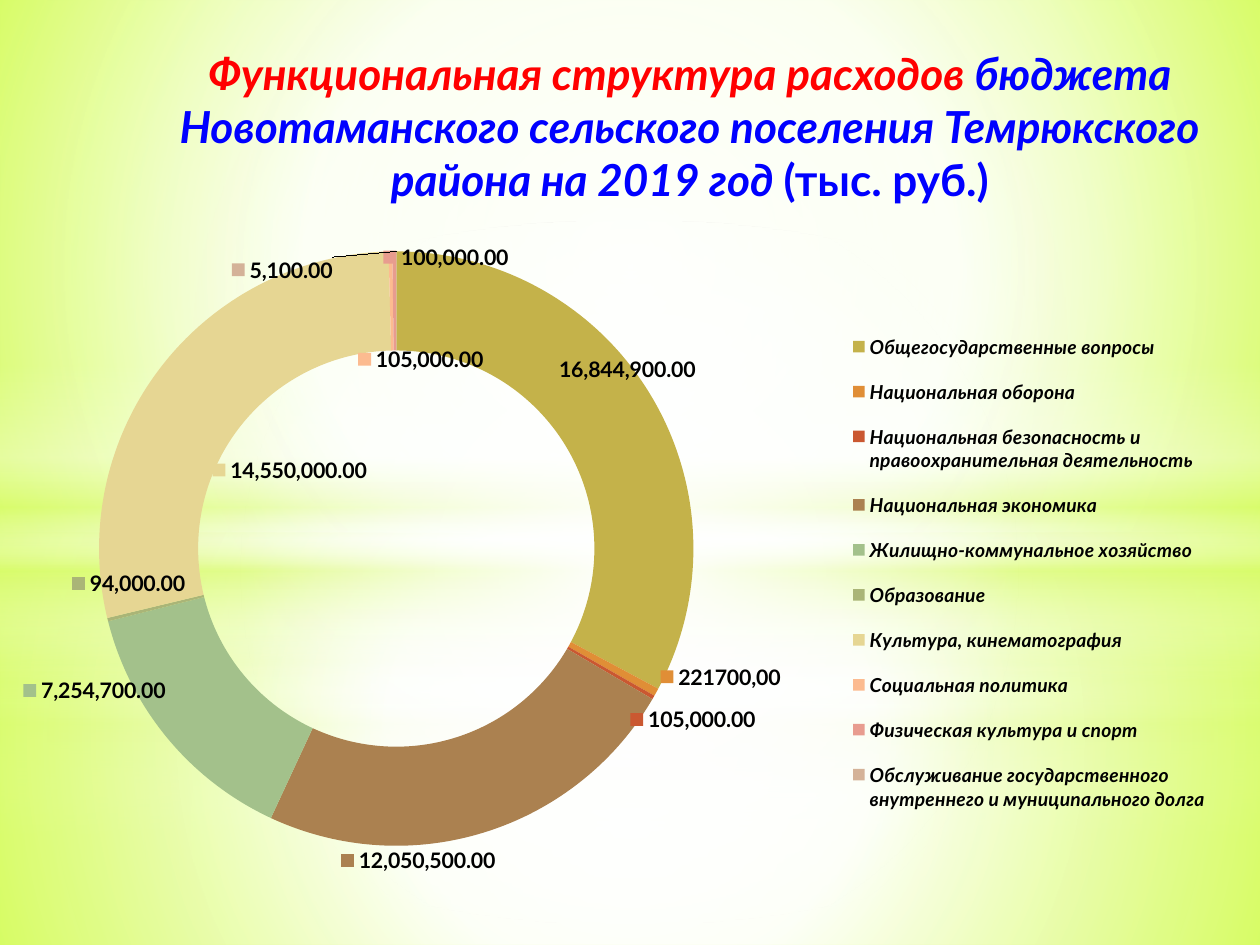
import math
from dataclasses import dataclass

import pptx
import pptx.chart.data
import pptx.dml.color
import pptx.enum.chart
import pptx.enum.shapes
import pptx.enum.text
import pptx.oxml
import pptx.util
from lxml import etree

A = "http://schemas.openxmlformats.org/drawingml/2006/main"
C = "http://schemas.openxmlformats.org/drawingml/2006/chart"
NS = f'xmlns:a="{A}" xmlns:c="{C}"'


@dataclass
class Theme:
    font: str = "Lato"
    red: str = "FF0000"
    blue: str = "0000FF"
    black: str = "000000"
    white: str = "FFFFFF"
    lime: str = "D8FC68"
    backdrop: tuple = ((0, "D6FF5B"), (60, "F8FFE3"), (100, "C9FF25"))
    title_size: float = 25.2
    label_size: float = 12.2
    legend_size: float = 11


THEME = Theme()
WIDTH, HEIGHT = 10, 7.5
CHART_TOP, CHART_HEIGHT = 0.02, 7.48
PLOT = (0, 0.159, 0.629, 0.841)
LEGEND = (0.667, 0.33, 0.3, 0.55)

# Category, value, colour, label centre in inches
EXPENSES = [
    ("Общегосударственные вопросы", 16844900, "C4B24A", (4.98, 2.93)),
    ("Национальная оборона", 221700, "E08E36", (5.72, 5.37)),
    ("Национальная безопасность и правоохранительная деятельность", 105000, "CA5831", (5.5, 5.71)),
    ("Национальная экономика", 12050500, "AB8150", (3.32, 6.83)),
    ("Жилищно-коммунальное хозяйство", 7254700, "A3C18B", (0.75, 5.48)),
    ("Образование", 94000, "AAB577", (1.02, 4.63)),
    ("Культура, кинематография", 14550000, "E6D693", (2.3, 3.73)),
    ("Социальная политика", 105000, "FCBB90", (3.34, 2.85)),
    ("Физическая культура и спорт", 100000, "E89C8F", (3.54, 2.04)),
    ("Обслуживание государственного внутреннего и муниципального долга", 5100, "D4B298", (2.24, 2.14)),
]
CUSTOM_LABELS = {1: "221700,00"}


def style(font, size, color, bold=True, italic=False):
    font.name, font.size = THEME.font, pptx.util.Pt(size)
    font.bold, font.italic = bold, italic
    font.color.rgb = pptx.dml.color.RGBColor.from_string(color)


def gradient(stops, focus=None):
    """Gradient of (position, colour[, opacity]) stops; radial around focus, else vertical."""
    marks = "".join(
        f'<a:gs pos="{pos * 1000}"><a:srgbClr val="{color}">'
        f'<a:alpha val="{(opacity[0] if opacity else 100) * 1000}"/></a:srgbClr></a:gs>'
        for pos, color, *opacity in stops)
    direction = '<a:lin ang="5400000" scaled="0"/>'
    if focus:
        sides = " ".join(f'{side}="{share * 1000}"' for side, share in zip("ltrb", focus))
        direction = f'<a:path path="circle"><a:fillToRect {sides}/></a:path>'
    return pptx.oxml.parse_xml(
        f'<a:gradFill {NS} rotWithShape="1"><a:gsLst>{marks}</a:gsLst>{direction}</a:gradFill>')


def manual_layout(box, inner=False):
    target = '<c:layoutTarget val="inner"/>' if inner else ""
    modes = '<c:xMode val="edge"/><c:yMode val="edge"/>' if len(box) == 4 else ""
    sizes = "".join(f'<c:{tag} val="{share:.4f}"/>' for tag, share in zip("xywh", box))
    return f'<c:layout {NS}><c:manualLayout>{target}{modes}{sizes}</c:manualLayout></c:layout>'


def set_layout(parent, box, before, inner=False):
    for old in parent.findall(f"{{{C}}}layout"):
        parent.remove(old)
    parent.find(f"{{{C}}}{before}").addprevious(pptx.oxml.parse_xml(manual_layout(box, inner)))


class Deck:
    def __init__(self):
        self.file = pptx.Presentation()
        self.file.slide_width = pptx.util.Inches(WIDTH)
        self.file.slide_height = pptx.util.Inches(HEIGHT)
        self.slide = self.file.slides.add_slide(self.file.slide_layouts[5])

    def box(self, left, top, width, height):
        """Shares of the slide's size as lengths."""
        return [pptx.util.Inches(v) for v in
                (left * WIDTH, top * HEIGHT, width * WIDTH, height * HEIGHT)]

    def background(self, stops, focus):
        fill = self.slide.background.fill
        fill.solid()
        solid = self.slide.element.find(f".//{{{A}}}solidFill")
        solid.getparent().replace(solid, gradient(stops, focus))

    def glow(self, kind, top, height, stops, focus=None):
        band = self.slide.shapes.add_shape(kind, *self.box(0, top / HEIGHT, 1, height / HEIGHT))
        band.shadow.inherit = False
        band.line.fill.background()
        band.fill.solid()
        solid = band._element.spPr.find(f"{{{A}}}solidFill")
        solid.getparent().replace(solid, gradient(stops, focus))

    def title(self, runs, box):
        heading = self.slide.shapes.title
        heading.left, heading.top, heading.width, heading.height = self.box(*box)
        frame = heading.text_frame
        frame.word_wrap = True
        frame.auto_size = pptx.enum.text.MSO_AUTO_SIZE.NONE
        frame.vertical_anchor = pptx.enum.text.MSO_ANCHOR.BOTTOM
        frame.margin_bottom = pptx.util.Inches(0.47)
        line = frame.paragraphs[0]
        line.alignment = pptx.enum.text.PP_ALIGN.CENTER
        for words, color, italic in runs:
            run = line.add_run()
            run.text = words
            style(run.font, THEME.title_size, color, italic=italic)
        self.slide.shapes._spTree.append(heading._element)  # bring in front of the glow

    def doughnut(self, rows, box):
        data = pptx.chart.data.CategoryChartData(number_format="#,##0.00")
        data.categories = [row[0] for row in rows]
        empty = [None] * len(rows)
        for number, values in enumerate((empty, [row[1] for row in rows], empty), 1):
            data.add_series(f"Series {number}", values)
        chart = self.slide.shapes.add_chart(
            pptx.enum.chart.XL_CHART_TYPE.DOUGHNUT, *self.box(*box), data).chart
        style(chart.font, 10, THEME.black, bold=False)
        chart.has_title = False
        chart.has_legend = True
        legend = chart.legend
        legend.position = pptx.enum.chart.XL_LEGEND_POSITION.RIGHT
        legend.include_in_layout = False
        style(legend.font, THEME.legend_size, THEME.black, italic=True)
        set_layout(legend._element, LEGEND, "overlay")
        plot = chart.plots[0]
        plot.vary_by_categories = True
        set_layout(plot._element.getparent(), PLOT, "doughnutChart", inner=True)
        for series in plot.series:
            for index, row in enumerate(rows):
                wedge = series.points[index].format
                wedge.fill.solid()
                wedge.fill.fore_color.rgb = pptx.dml.color.RGBColor.from_string(row[2])
                wedge.line.fill.background()
        self.wedge_labels(plot.series[1], rows)

    def wedge_labels(self, series, rows):
        labels = series.data_labels
        labels.show_value = True
        labels.number_format, labels.number_format_is_linked = "#,##0.00", False
        style(labels.font, THEME.label_size, THEME.black)
        # Label offsets run from the middle of each wedge of the middle ring
        radius = PLOT[2] * WIDTH / 2
        center_y = CHART_TOP + (PLOT[1] + PLOT[3] / 2) * CHART_HEIGHT
        total, passed = sum(row[1] for row in rows), 0
        for index, (_, value, _, (x, y)) in enumerate(rows):
            angle = 2 * math.pi * (passed + value / 2) / total
            passed += value
            ring = radius * 0.625
            offset = ((x - radius - ring * math.sin(angle)) / WIDTH,
                      (y - center_y + ring * math.cos(angle)) / CHART_HEIGHT)
            label = series.points[index].data_label
            if index in CUSTOM_LABELS:
                run = label.text_frame.paragraphs[0].add_run()
                run.text = CUSTOM_LABELS[index]
                style(run.font, THEME.label_size, THEME.black)
            else:
                style(label.font, THEME.label_size, THEME.black)
            node = labels._element.findall(f"{{{C}}}dLbl")[index]
            node.find(f"{{{C}}}idx").addnext(pptx.oxml.parse_xml(manual_layout(offset)))
            node.find(f"{{{C}}}showLegendKey").set("val", "1" if index else "0")
            for tag in ("showCatName", "showSerName", "showPercent", "dLblPos"):
                for flag in node.findall(f"{{{C}}}{tag}"):
                    if tag == "dLblPos":
                        node.remove(flag)
                    else:
                        flag.set("val", "0")


def main():
    deck = Deck()
    # Glowing lime backdrop: two layers of bands, each with a white oval
    deck.background(THEME.backdrop, (20, 10, 20, 60))
    rect = pptx.enum.shapes.MSO_SHAPE.RECTANGLE
    oval = pptx.enum.shapes.MSO_SHAPE.OVAL
    white, lime, middle = THEME.white, THEME.lime, (50, 50, 50, 50)
    streak = [(0, white, 0), (29, white, 30), (45, lime, 40),
              (55, white, 26), (65, lime, 60), (100, white, 0)]
    for horizon, streak_top, shift, fade in ((5.58, 4.12, 0, 56), (4.23, 2.9, 1, 54)):
        deck.glow(rect, horizon, HEIGHT - horizon,
                  [(0, white, 91 + shift), (37, white, 76 + shift), (100, lime, 79 + shift)], middle)
        deck.glow(rect, 0, horizon,
                  [(0, white, 89 + shift), (48, white, 62 + shift), (100, lime, 79 + shift)], middle)
        deck.glow(rect, streak_top, 2.5, streak)
        deck.glow(oval, 1.75, 5.58, [(0, white, 100), (fade, white, 0)], middle)
    # Heading and chart
    deck.title([
        ("Функциональная структура расходов ", THEME.red, True),
        ("бюджета Новотаманского сельского поселения Темрюкского района на 2019 год ", THEME.blue, True),
        ("(тыс. руб.)", THEME.blue, False),
    ], (0.13, 0, 0.835, 0.28))
    deck.doughnut(EXPENSES, (0, CHART_TOP / HEIGHT, 1, CHART_HEIGHT / HEIGHT))
    deck.file.save("out.pptx")


if __name__ == "__main__":
    main()
